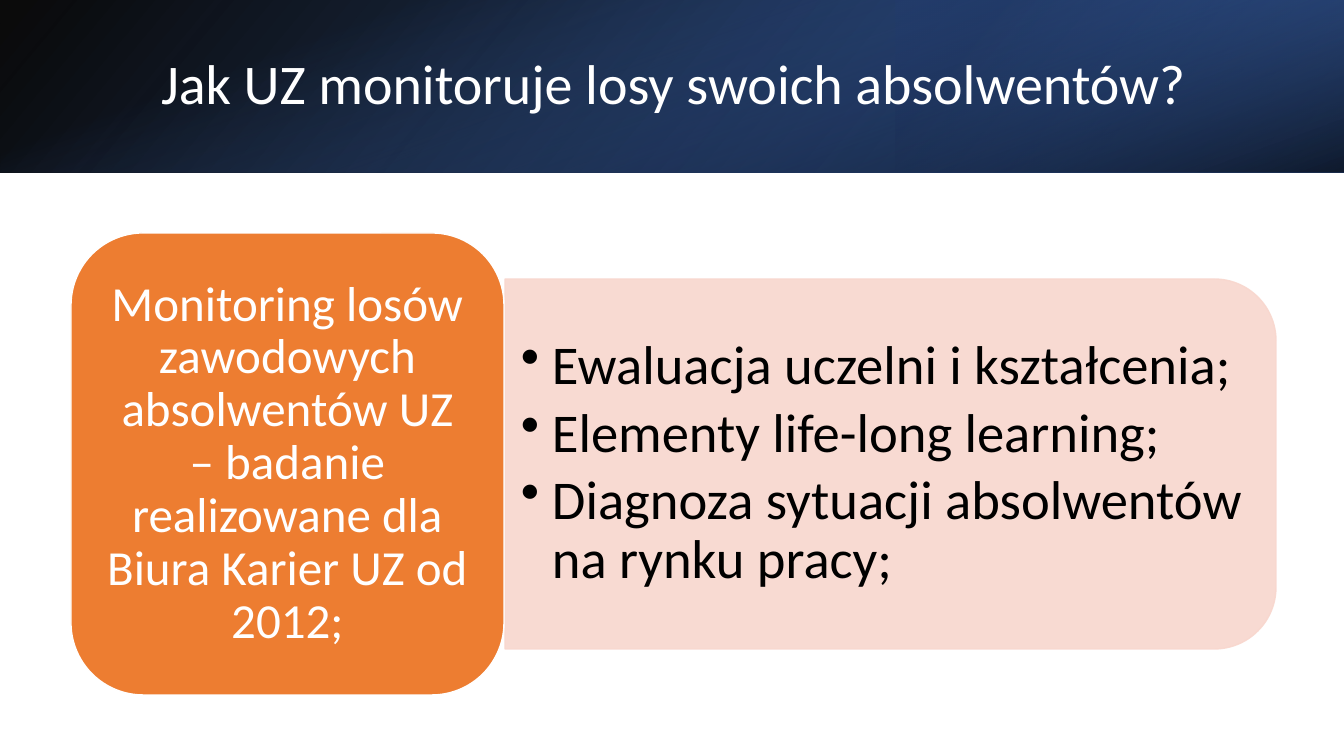
"""Builds the slide on how UZ monitors what becomes of its graduates."""
from lxml import etree
from pptx import Presentation
from pptx import util as u
from pptx.dml.color import RGBColor
from pptx.enum import shapes, text
from pptx.oxml import parse_xml
from pptx.oxml.ns import nsdecls, qn

PX = 914400 / 100.8
W, H, BAND_H = 1344, 756, 173
FONT = "Calibri"
COLORS = {
    "black": "000000",
    "white": "FFFFFF",
    "navy": "203864",
    "deep_blue": "2F5597",
    "blue": "4472C4",
    "orange": "ED7D31",
    "peach": "F8D7CE",
}
TITLE = "Jak UZ monitoruje losy swoich absolwentów?"
SURVEY = ("Monitoring losów zawodowych absolwentów UZ – badanie "
          "realizowane dla Biura Karier UZ od 2012;")
GOALS = [
    "Ewaluacja uczelni i kształcenia;",
    "Elementy life-long learning;",
    "Diagnoza sytuacji absolwentów na rynku pracy;",
]


def px(n):
    """Turn pixels into EMU."""
    return u.Emu(round(n * PX))


def rgb(name):
    """Look up a named colour."""
    return RGBColor.from_string(COLORS[name])


def add_shape(slide, kind, box, rotation=0):
    """Add a shape that covers the box after its rotation."""
    x, y, w, h = box
    if rotation == 90:
        x, y, w, h = x + (w - h) / 2, y + (h - w) / 2, h, w
    sp = slide.shapes.add_shape(kind, px(x), px(y), px(w), px(h))
    sp.rotation = rotation
    sp.shadow.inherit = False
    return sp


def add_gradient(slide, box, stops, angle, rotation=0, flip=False):
    """Add a rectangle with a gradient of translucent stops."""
    sp = add_shape(slide, shapes.MSO_SHAPE.RECTANGLE, box, rotation)
    sp.line.fill.background()
    spPr = sp._element.spPr
    if flip:
        spPr.find(qn("a:xfrm")).set("flipH", "1")
    marks = "".join(
        f'<a:gs pos="{pos * 1000}"><a:srgbClr val="{COLORS[name]}">'
        f'<a:alpha val="{alpha * 1000}"/></a:srgbClr></a:gs>'
        for pos, name, alpha in stops)
    spPr.find(qn("a:prstGeom")).addnext(parse_xml(
        f'<a:gradFill {nsdecls("a")} rotWithShape="1"><a:gsLst>{marks}</a:gsLst>'
        f'<a:lin ang="{angle * 60000}" scaled="0"/></a:gradFill>'))


def add_card(slide, kind, box, fill, line, alpha=100, rotation=0):
    """Add a filled and outlined card."""
    sp = add_shape(slide, kind, box, rotation)
    sp.fill.solid()
    sp.fill.fore_color.rgb = rgb(fill)
    sp.line.color.rgb = rgb(line)
    sp.line.width = u.Pt(1)
    if alpha < 100:
        for color in sp._element.spPr.iter(qn("a:srgbClr")):
            etree.SubElement(color, qn("a:alpha")).set("val", str(alpha * 1000))
    return sp


def add_box(slide, box):
    """Add an empty text box."""
    return slide.shapes.add_textbox(*map(px, box))


def write(sp, lines, size, color, margins, align=text.PP_ALIGN.LEFT, bullets=False):
    """Write paragraphs in the middle of a shape."""
    tf = sp.text_frame
    tf.word_wrap = True
    tf.vertical_anchor = text.MSO_ANCHOR.MIDDLE
    tf.margin_left = tf.margin_right = px(margins[0])
    tf.margin_top = tf.margin_bottom = px(margins[1])
    tf.text = "\n".join(lines)
    for p in tf.paragraphs:
        p.alignment = align
        p.line_spacing = 0.9
        p.font.name = FONT
        p.font.size = u.Pt(size)
        p.font.color.rgb = rgb(color)
        if bullets:
            add_bullet(p)


def add_bullet(p):
    """Give a paragraph a hanging bullet."""
    p.space_after = u.Pt(6)
    pPr = p._p.get_or_add_pPr()
    pPr.set("marL", str(px(31)))
    pPr.set("indent", str(px(-31)))
    bullet = parse_xml(f'<a:buChar {nsdecls("a")} char="•"/>')
    pPr.find(qn("a:defRPr")).addprevious(bullet)


def add_band(slide):
    """Add the dark title band and its title."""
    band = (0, 0, W, BAND_H)
    right_third = (W * 2 // 3, 0, W // 3, BAND_H)
    add_gradient(slide, band, [(0, "black", 96), (100, "deep_blue", 100)], 140, flip=True)
    add_gradient(slide, right_third, [(19, "navy", 68), (100, "blue", 79)], 320, 180, True)
    add_gradient(slide, band, [(23, "blue", 0), (99, "black", 74)], 340, 90)
    write(add_box(slide, (151, 38, 1107, 97)), [TITLE], 40, "white", (10, 5))


def main():
    """Build and save the slide."""
    prs = Presentation()
    prs.slide_width, prs.slide_height = px(W), px(H)
    slide = prs.slides.add_slide(prs.slide_layouts[6])
    add_band(slide)
    kinds = shapes.MSO_SHAPE
    add_card(slide, kinds.ROUND_2_SAME_RECTANGLE, (505, 279, 771, 370),
             "peach", "peach", 90, 90)
    write(add_box(slide, (505, 297, 753, 334)), GOALS, 39, "black", (16, 8), bullets=True)
    survey = add_card(slide, kinds.ROUNDED_RECTANGLE, (71, 233, 433, 462), "orange", "white")
    write(survey, [SURVEY], 35, "white", (15, 7), text.PP_ALIGN.CENTER)
    prs.save("out.pptx")


if __name__ == "__main__":
    main()
